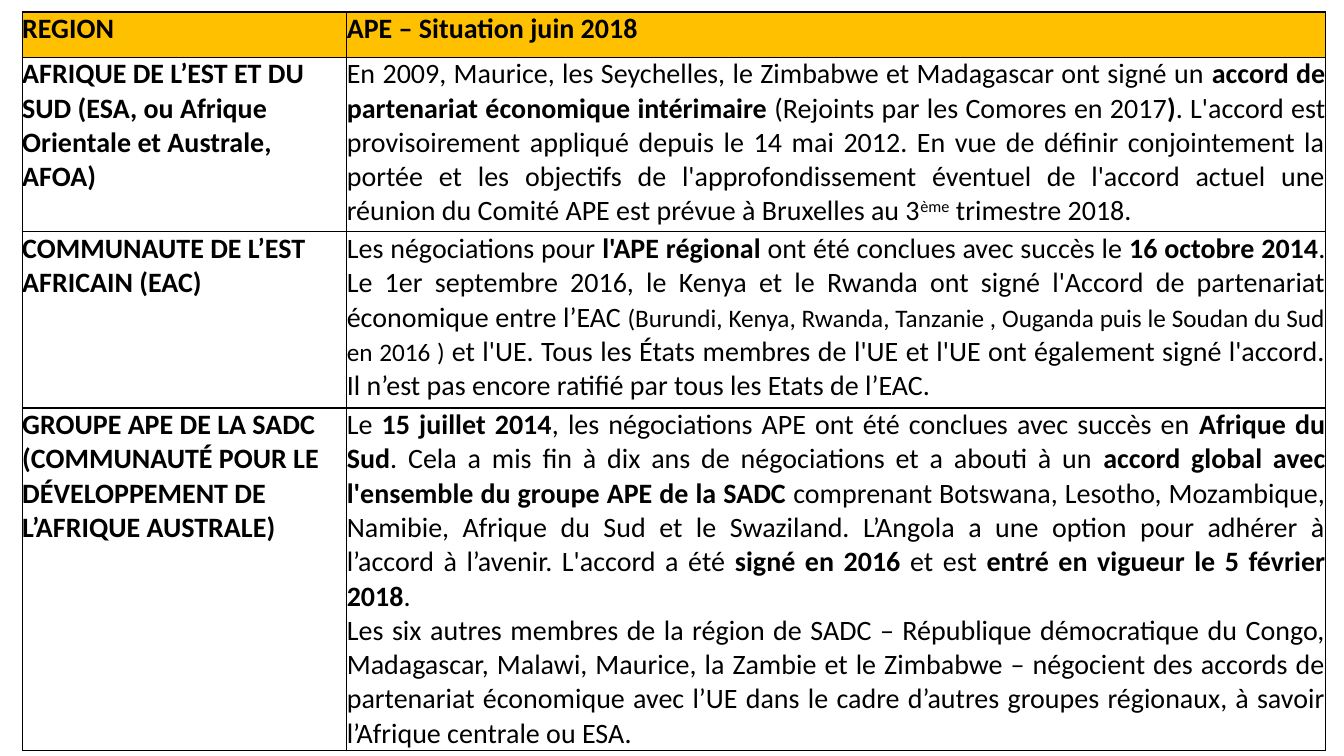
from lxml import etree
from pptx import Presentation
from pptx.dml.color import RGBColor
from pptx.enum.text import PP_ALIGN
from pptx.oxml.ns import qn
from pptx.util import Cm, Pt

LEFT, JUSTIFY = PP_ALIGN.LEFT, PP_ALIGN.JUSTIFY
BLACK, AMBER = "000000", "FFC000"
PLAIN, BOLD, SMALL, SUPER = "plain", "bold", "small", "super"

# Content: each row is a region and its paragraphs, made of (text, style) spans
HEADER = ("REGION", [[("APE – Situation juin 2018", BOLD)]])
REGIONS = [
    ("AFRIQUE DE L’EST ET DU SUD (ESA, ou Afrique Orientale et Australe, AFOA)", [[
        ("En 2009, Maurice, les Seychelles, le Zimbabwe et Madagascar ont signé un ", PLAIN),
        ("accord de partenariat économique intérimaire ", BOLD),
        ("(Rejoints par les Comores en 2017", PLAIN),
        (")", BOLD),
        (". L'accord est provisoirement appliqué depuis le 14 mai 2012. En vue de définir "
         "conjointement la portée et les objectifs de l'approfondissement éventuel de l'accord "
         "actuel une réunion du Comité APE est prévue à Bruxelles au 3", PLAIN),
        ("ème", SUPER),
        (" trimestre 2018.", PLAIN),
    ]]),
    ("COMMUNAUTE DE L’EST AFRICAIN (EAC)", [[
        ("Les négociations pour ", PLAIN),
        ("l'APE régional", BOLD),
        (" ont été conclues avec succès le ", PLAIN),
        ("16 octobre 2014", BOLD),
        (". Le 1er septembre 2016, le Kenya et le Rwanda ont signé l'Accord de partenariat "
         "économique entre l’EAC ", PLAIN),
        ("(Burundi, Kenya, Rwanda, Tanzanie , Ouganda puis le Soudan du Sud en 2016 ) ", SMALL),
        ("et l'UE. Tous les États membres de l'UE et l'UE ont également signé l'accord. "
         "Il n’est pas encore ratifié par tous les Etats de l’EAC.", PLAIN),
    ]]),
    ("GROUPE APE DE LA SADC (COMMUNAUTÉ POUR LE DÉVELOPPEMENT DE L’AFRIQUE AUSTRALE)", [[
        ("Le ", PLAIN),
        ("15 juillet 2014", BOLD),
        (", les négociations APE ont été conclues avec succès en ", PLAIN),
        ("Afrique du Sud", BOLD),
        (". Cela a mis fin à dix ans de négociations et a abouti à un ", PLAIN),
        ("accord global avec l'ensemble du groupe APE de la SADC ", BOLD),
        ("comprenant Botswana, Lesotho, Mozambique, Namibie, Afrique du Sud et le Swaziland. "
         "L’Angola a une option pour adhérer à l’accord à l’avenir. L'accord a été ", PLAIN),
        ("signé en 2016 ", BOLD),
        ("et est ", PLAIN),
        ("entré en vigueur le 5 février 2018", BOLD),
        (". ", PLAIN),
    ], [
        ("Les six autres membres de la région de SADC – République démocratique du Congo, "
         "Madagascar, Malawi, Maurice, la Zambie et le Zimbabwe – négocient des accords de "
         "partenariat économique avec l’UE dans le cadre d’autres groupes régionaux, à savoir "
         "l’Afrique centrale ou ESA.", PLAIN),
    ]]),
]
COLUMN_WIDTHS = [Cm(8.18), Cm(24.66)]
ROW_HEIGHTS = [Cm(1.14), Cm(4.4), Cm(4.44), Cm(8.2)]


def color(value):
    return RGBColor.from_string(value)


def add_borders(cell):
    properties = cell._tc.get_or_add_tcPr()
    for position, side in enumerate(("a:lnL", "a:lnR", "a:lnT", "a:lnB")):
        line = etree.Element(qn(side), w=str(Pt(1)))
        fill = etree.SubElement(line, qn("a:solidFill"))
        etree.SubElement(fill, qn("a:srgbClr"), val=BLACK)
        properties.insert(position, line)


def fill_cell(cell, paragraphs, alignment, background):
    cell.margin_left = cell.margin_right = cell.margin_top = cell.margin_bottom = 0
    if background:
        cell.fill.solid()
        cell.fill.fore_color.rgb = color(background)
    else:
        cell.fill.background()
    add_borders(cell)
    frame = cell.text_frame
    for index, spans in enumerate(paragraphs):
        para = frame.add_paragraph() if index else frame.paragraphs[0]
        para.alignment = alignment
        for text, style in spans:
            span = para.add_run()
            span.text = text
            font = span.font
            font.name = "Calibri"
            font.size = Pt(18 if style == SMALL else 20)
            font.bold = style == BOLD
            font.color.rgb = color(BLACK)
            if style == SUPER:
                font._element.set("baseline", "30000")


deck = Presentation()
deck.slide_width, deck.slide_height = Cm(33.87), Cm(19.05)
page = deck.slides.add_slide(deck.slide_layouts[6])

# Table grid
rows = [HEADER] + REGIONS
table = page.shapes.add_table(len(rows), len(COLUMN_WIDTHS), Cm(0.56), Cm(0.3),
                              sum(COLUMN_WIDTHS), sum(ROW_HEIGHTS)).table
for column, width in zip(table.columns, COLUMN_WIDTHS):
    column.width = width
for row, height in zip(table.rows, ROW_HEIGHTS):
    row.height = height

# Cell contents
for number, (region, situation) in enumerate(rows):
    background = None if number else AMBER
    fill_cell(table.cell(number, 0), [[(region, BOLD)]], LEFT, background)
    fill_cell(table.cell(number, 1), situation, JUSTIFY, background)

deck.save("out.pptx")
